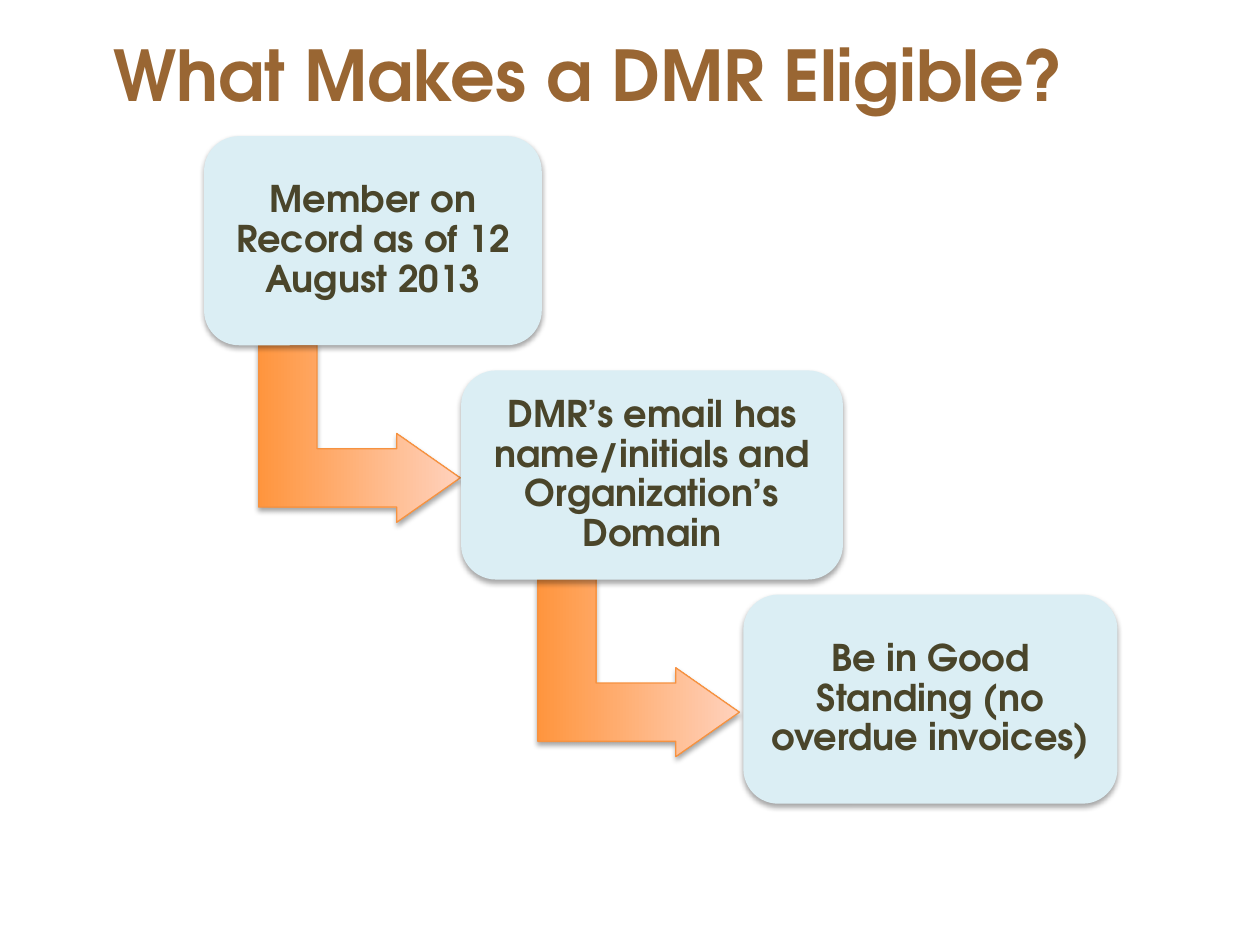
from lxml.etree import SubElement
from pptx import Presentation
from pptx.dml.color import RGBColor
from pptx.enum.shapes import MSO_SHAPE
from pptx.enum.text import MSO_ANCHOR, MSO_AUTO_SIZE, PP_ALIGN
from pptx.oxml.ns import qn
from pptx.util import Pt

COLORS = {
    "title": "996633",
    "text": "4A452A",
    "box": "DBEEF4",
    "arrow_start": "FF953E",
    "arrow_end": "FFD2BD",
    "arrow_line": "F69240",
    "shadow": "000000",
}
BOX_HEIGHT = 119.5
ARROW_WIDTH, ARROW_HEIGHT = 101.5, 115.2  # before the quarter turn
ARROW_DROP = 112.3  # from the top of a box to the top of its arrow
ARROW_SHIFT = -7.7  # from the centre of a box to the centre of its arrow


class StepSlide:
    """Style and drawing methods for a slide of descending steps."""

    font_name = "TeX Gyre Adventor"

    def __init__(self, slide):
        self.slide = slide

    def color(self, name):
        return RGBColor.from_string(COLORS[name])

    def set_text(self, shape, text, size, color_name):
        text_frame = shape.text_frame
        text_frame.text = text
        text_frame.word_wrap = True
        text_frame.auto_size = MSO_AUTO_SIZE.NONE
        text_frame.vertical_anchor = MSO_ANCHOR.MIDDLE
        paragraph = text_frame.paragraphs[0]
        paragraph.alignment = PP_ALIGN.CENTER
        font = paragraph.runs[0].font
        font.name, font.size, font.bold = self.font_name, Pt(size), True
        font.color.rgb = self.color(color_name)
        return text_frame

    def add_shadow(self, shape):
        shape.shadow.inherit = False
        effects = shape.element.spPr.find(qn("a:effectLst"))
        shadow = SubElement(effects, qn("a:outerShdw"), blurRad=str(Pt(3.1)),
                            dist=str(Pt(1.8)), dir="5400000", rotWithShape="0")
        shade = SubElement(shadow, qn("a:srgbClr"), val=COLORS["shadow"])
        SubElement(shade, qn("a:alpha"), val="35000")

    def add_title(self, text, left, top, width, height):
        title = self.slide.shapes.title
        title.left, title.top = Pt(left), Pt(top)
        title.width, title.height = Pt(width), Pt(height)
        self.set_text(title, text, 40, "title")

    def add_arrow(self, left, top):
        arrow = self.slide.shapes.add_shape(
            MSO_SHAPE.BENT_UP_ARROW, Pt(left), Pt(top),
            Pt(ARROW_WIDTH), Pt(ARROW_HEIGHT))
        arrow.rotation = 90
        for index, value in enumerate((0.328, 0.25, 0.358)):
            arrow.adjustments[index] = value
        arrow.fill.gradient()
        arrow.fill.gradient_angle = 90
        for stop, name in zip(arrow.fill.gradient_stops,
                              ("arrow_start", "arrow_end")):
            stop.color.rgb = self.color(name)
        arrow.line.color.rgb = self.color("arrow_line")
        arrow.line.width = Pt(0.75)
        self.add_shadow(arrow)

    def add_box(self, text, left, top, width):
        box = self.slide.shapes.add_shape(
            MSO_SHAPE.ROUNDED_RECTANGLE, Pt(left), Pt(top),
            Pt(width), Pt(BOX_HEIGHT))
        box.adjustments[0] = 0.167
        box.fill.solid()
        box.fill.fore_color.rgb = self.color("box")
        box.line.fill.background()
        self.add_shadow(box)
        text_frame = self.set_text(box, text, 21, "text")
        text_frame.margin_left = text_frame.margin_right = Pt(6.3)
        text_frame.margin_top = text_frame.margin_bottom = Pt(6.3)
        text_frame.paragraphs[0].line_spacing = 0.9


def main():
    presentation = Presentation()
    presentation.slide_width, presentation.slide_height = Pt(720), Pt(540)
    layout = presentation.slide_layouts.get_by_name("Title Only")
    page = StepSlide(presentation.slides.add_slide(layout))

    page.add_title("What Makes a DMR Eligible?", -47.5, -28.8, 767.5, 141.8)

    # Steps: text, left, top, width
    steps = [
        ("Member on Record as of 12 August 2013", 116.6, 77.8, 193),
        ("DMR’s email has name/initials and Organization’s Domain",
         263.5, 211.7, 218.2),
        ("Be in Good Standing (no overdue invoices)", 424.8, 339.8, 213.8),
    ]
    for number, (text, left, top, width) in enumerate(steps, start=1):
        # Each arrow starts behind its box and leads to the next one
        if number < len(steps):
            center = left + width / 2 + ARROW_SHIFT
            page.add_arrow(center - ARROW_WIDTH / 2, top + ARROW_DROP)
        page.add_box(text, left, top, width)

    presentation.save("out.pptx")


if __name__ == "__main__":
    main()
